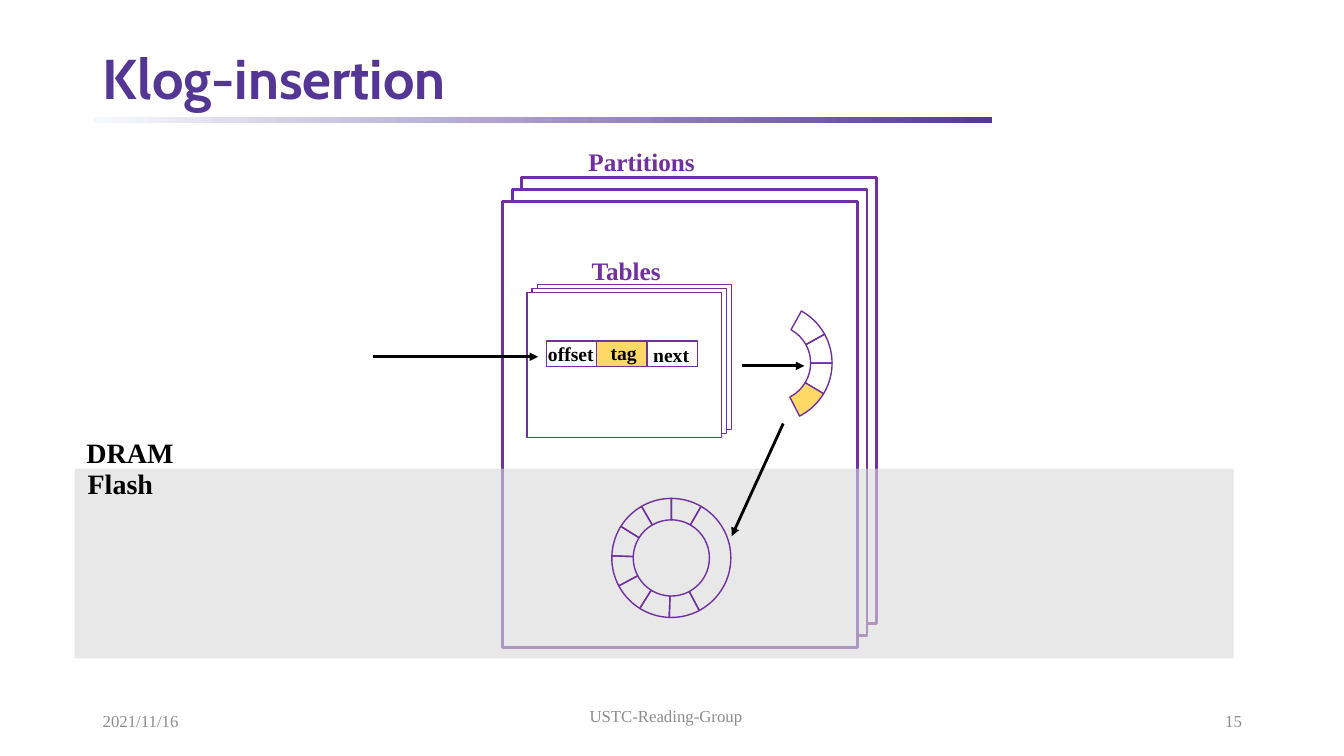
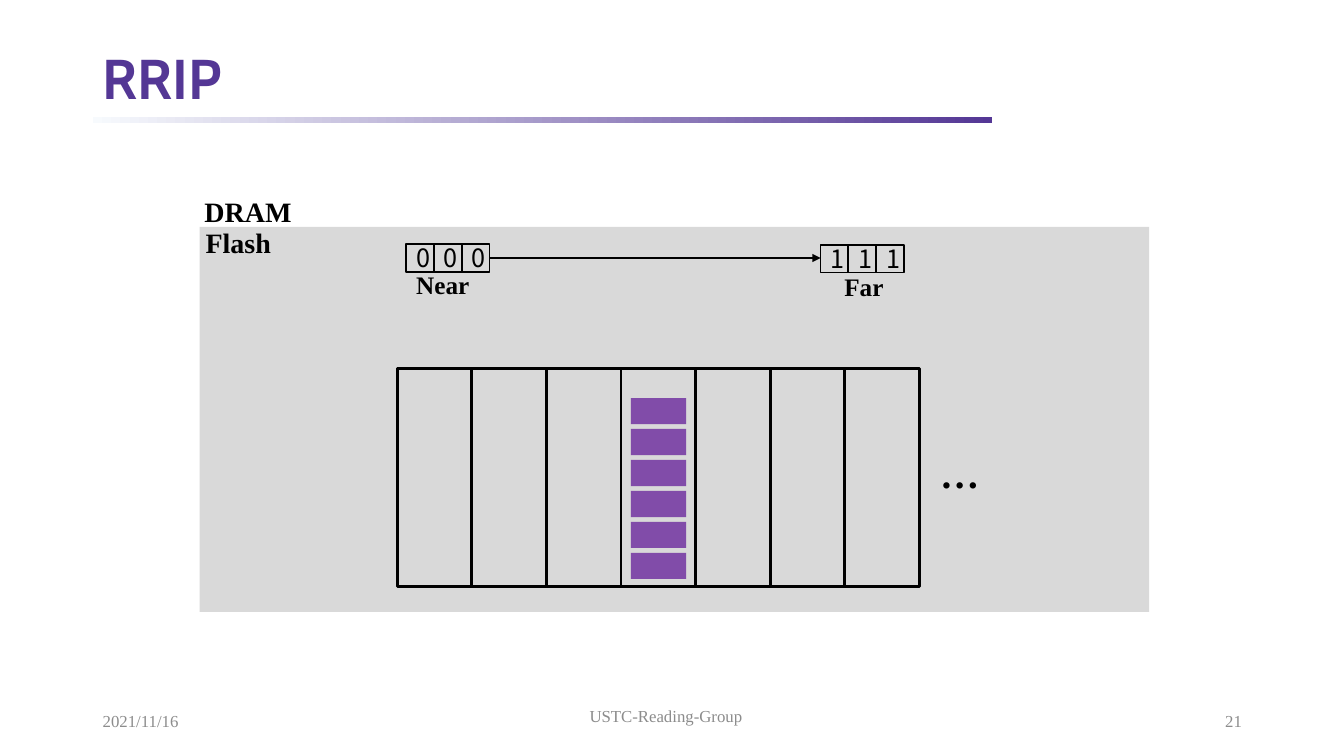
import pptx
import pptx.util
import pptx.dml.color
import pptx.enum.shapes
import pptx.enum.text
import pptx.oxml
import pptx.oxml.ns

Cm, Pt = pptx.util.Cm, pptx.util.Pt
SHAPE = pptx.enum.shapes.MSO_SHAPE
ALIGN = pptx.enum.text.PP_ALIGN
ANCHOR = pptx.enum.text.MSO_ANCHOR
AUTO = pptx.enum.text.MSO_AUTO_SIZE

COLORS = {"title": "543795", "fade": "F7FAFD", "purple": "7030A0",
          "gold": "FFD966", "gray": "D9D9D9", "footer": "8C8C8C",
          "white": "FFFFFF", "black": "000000"}
SERIF, TITLE_FONT, DIGIT_FONT = "Times New Roman", "Cabin", "Noto Sans CJK SC"

# Shared content: text, box in cm, alignment
DATE = ("2021/11/16", (2.34, 17.65, 7.62, 1.02), ALIGN.LEFT)
GROUP = ("USTC-Reading-Group", (11.07, 17.53, 11.43, 1.02), ALIGN.CENTER)
NUMBER_BOX = (23.93, 17.65, 7.62, 1.02)

# Klog-insertion: front card of each stack, offset to the next card behind
PARTITIONS = dict(box=(12.67, 5.08, 8.94, 11.23), step=(0.24, -0.3), width=2)
TABLES = dict(box=(13.28, 7.37, 4.9, 3.66), step=(0.13, -0.1), width=1)
STACK_LABELS = [("Partitions", (14.58, 3.56, 3.23, 1.02)),
                ("Tables", (14.66, 6.3, 2.26, 1.02))]
ENTRY_FIELDS = [("offset", (13.56, 8.48, 1.68, 0.86), None),
                ("tag", (15.14, 8.46, 1.17, 0.86), "gold"),
                ("next", (16.21, 8.51, 1.42, 0.86), None)]
# Block edges in degrees, clockwise from the right
LOG_EDGES = [*range(62, 213, 30), 240, 270, 300, 62]
BUFFER_EDGES = [299, 331, 0, 31, 63]
INSERT_ARROWS = [((18.69, 9.22), (20.27, 9.22)),
                 ((9.4, 8.99), (13.56, 8.99)),
                 ((19.74, 10.67), (18.44, 13.51))]

# RRIP: bits, corner of the first bit, label, label box
PREDICTIONS = [("000", (10.24, 6.15), "Near", (10.24, 6.65, 1.85, 1.02)),
               ("111", (20.68, 6.17), "Far", (21.03, 6.71, 1.5, 1.02))]
SET_COUNT, OBJECT_COUNT = 7, 6


def rgb(name):
    return pptx.dml.color.RGBColor.from_string(COLORS[name])


def cm(values):
    return [Cm(v) for v in values]


def style(p, size, color="black", font=SERIF, bold=True, align=ALIGN.LEFT):
    p.alignment = align
    p.font.size, p.font.name, p.font.bold = Pt(size), font, bold
    p.font.color.rgb = rgb(color)


def add_shape(s, box, fill=None, line=None, width=1, alpha=None, kind=SHAPE.RECTANGLE):
    sp = s.shapes.add_shape(kind, *cm(box))
    sp.shadow.inherit = False
    if fill:
        sp.fill.solid()
        sp.fill.fore_color.rgb = rgb(fill)
    else:
        sp.fill.background()
    if line:
        sp.line.color.rgb = rgb(line)
        sp.line.width = Pt(width)
    else:
        sp.line.fill.background()
    if alpha:
        color = sp.fill._xPr.find(".//" + pptx.oxml.ns.qn("a:srgbClr"))
        color.append(pptx.oxml.parse_xml(
            f'<a:alpha {pptx.oxml.ns.nsdecls("a")} val="{alpha * 1000}"/>'))
    return sp


def add_label(s, text, box, size, color="black"):
    tf = s.shapes.add_textbox(*cm(box)).text_frame
    tf.word_wrap = False
    tf.auto_size = AUTO.SHAPE_TO_FIT_TEXT
    tf.text = text
    style(tf.paragraphs[0], size, color)


def add_footer(s, text, box, align):
    tf = s.shapes.add_textbox(*cm(box)).text_frame
    tf.word_wrap = True
    tf.vertical_anchor = ANCHOR.MIDDLE
    tf.text = text
    style(tf.paragraphs[0], 12, "footer", bold=False, align=align)


def add_arrow(s, start, end, width):
    c = s.shapes.add_connector(pptx.enum.shapes.MSO_CONNECTOR.STRAIGHT, *cm(start + end))
    c.line.color.rgb = rgb("black")
    c.line.width = Pt(width)
    ns = pptx.oxml.ns.nsdecls("a")
    c.line._get_or_add_ln().append(pptx.oxml.parse_xml(f'<a:tailEnd {ns} type="triangle"/>'))
    c._element.spPr.append(pptx.oxml.parse_xml(f"<a:effectLst {ns}/>"))


def add_stack(s, box, step, width):
    x, y, w, h = box
    for depth in (2, 1, 0):
        add_shape(s, (x + depth * step[0], y + depth * step[1], w, h),
                  "white", "purple", width)


def add_ring(s, x, y, edges, last_fill=None):
    pairs = list(zip(edges, edges[1:]))
    for i, (start, end) in enumerate(pairs):
        fill = last_fill if i == len(pairs) - 1 else None
        sp = add_shape(s, (x, y, 3, 3), fill, "purple", kind=SHAPE.BLOCK_ARC)
        # Angles are stored in 1/60000 degree, adjustments in 1/100000
        sp.adjustments[0] = start * 0.6
        sp.adjustments[1] = end * 0.6
        sp.adjustments[2] = 0.18


def add_memory_labels(s, x, y):
    add_label(s, "DRAM", (x, y, 2.74, 1.12), 20)
    add_label(s, "Flash", (x + 0.03, y + 0.78, 2.18, 1.12), 20)


def new_slide(prs, title, number):
    s = prs.slides.add_slide(prs.slide_layouts[5])
    # Title
    sp = s.shapes.title
    sp.left, sp.top, sp.width, sp.height = cm((2.34, 1.09, 29.21, 1.9))
    tf = sp.text_frame
    tf.text = title
    tf.auto_size = AUTO.NONE
    tf.vertical_anchor = ANCHOR.MIDDLE
    p = tf.paragraphs[0]
    p.line_spacing = 0.9
    style(p, 40, "title", TITLE_FONT)
    # Fading rule under the title
    bar = add_shape(s, (2.34, 2.95, 22.66, 0.14))
    bar.fill.gradient()
    bar.fill.gradient_angle = 0
    for stop, color in zip(bar.fill.gradient_stops, ("fade", "title")):
        stop.color.rgb = rgb(color)
    # Footer
    for text, box, align in (DATE, GROUP, (str(number), NUMBER_BOX, ALIGN.RIGHT)):
        add_footer(s, text, box, align)
    return s


def build_insertion(prs):
    s = new_slide(prs, "Klog-insertion", 15)
    add_stack(s, **PARTITIONS)
    add_shape(s, (1.88, 11.81, 29.21, 4.78), "gray", alpha=60)
    add_memory_labels(s, 1.93, 10.85)
    add_stack(s, **TABLES)
    # Index entry
    for i, (text, box, fill) in enumerate(ENTRY_FIELDS):
        add_shape(s, (13.77 + i * 1.27, 8.59, 1.27, 0.64), fill, "purple")
    for text, box, fill in ENTRY_FIELDS:
        add_label(s, text, box, 14)
    for text, box in STACK_LABELS:
        add_label(s, text, box, 18, "purple")
    # Log on flash and its buffer in memory
    add_ring(s, 15.42, 12.56, LOG_EDGES)
    add_ring(s, 17.97, 7.65, BUFFER_EDGES, "gold")
    for start, end in INSERT_ARROWS:
        add_arrow(s, start, end, 2)


def build_rrip(prs):
    s = new_slide(prs, "RRIP", 21)
    add_shape(s, (5.03, 5.72, 23.93, 9.7), "gray")
    add_memory_labels(s, 4.9, 4.78)
    # Sets, and the objects of the middle one
    for i in range(SET_COUNT):
        add_shape(s, (10.01 + i * 1.88, 9.28, 1.88, 5.5), None, "black", 2)
    for i in range(OBJECT_COUNT):
        add_shape(s, (15.9, 10.03 + i * 0.78, 1.39, 0.66), "purple", alpha=83)
    add_label(s, "…", (23.44, 11.2, 1.5, 1.45), 28)
    # Prediction bits
    for bits, (x, y), text, box in PREDICTIONS:
        for i, bit in enumerate(bits):
            sp = add_shape(s, (x + i * 0.7, y, 0.7, 0.7), None, "black", 1.25)
            tf = sp.text_frame
            tf.text = bit
            tf.vertical_anchor = ANCHOR.MIDDLE
            style(tf.paragraphs[0], 18, font=DIGIT_FONT, bold=False, align=ALIGN.CENTER)
        add_label(s, text, box, 18)
    add_arrow(s, (12.34, 6.5), (20.68, 6.5), 1.25)


def main():
    prs = pptx.Presentation()
    prs.slide_width, prs.slide_height = Cm(33.87), Cm(19.05)
    build_insertion(prs)
    build_rrip(prs)
    prs.save("out.pptx")


if __name__ == "__main__":
    main()
